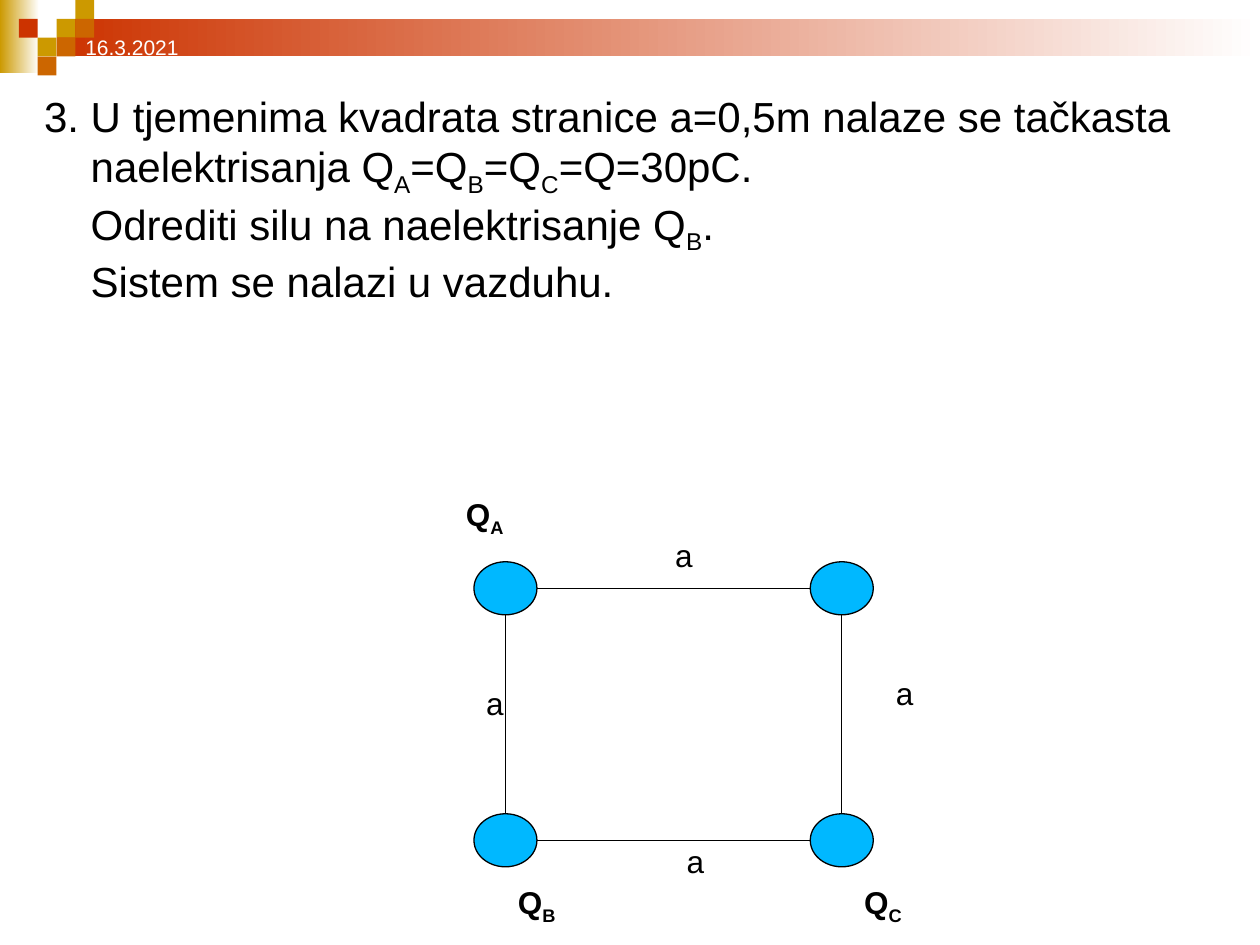
from pptx import Presentation
from pptx.dml.color import RGBColor
from pptx.enum.shapes import MSO_CONNECTOR, MSO_SHAPE
from pptx.enum.text import MSO_ANCHOR
from pptx.oxml.ns import qn
from pptx.util import Cm, Pt
from lxml.etree import SubElement

THEME = {
    "font": "Arial",
    "gold": "CC9900", "orange": "CC6600", "red": "CC3300",
    "white": "FFFFFF", "black": "000000", "charge": "00B8FF",
    "date": 12, "body": 24, "label": 18, "line": 0.75,
}

# Subscripts are written as a second item: (text, is_subscript)
DATE = [[("16.3.2021", False)]]
PROBLEM = [
    [("3. U tjemenima kvadrata stranice a=0,5m nalaze se tačkasta", False)],
    [("naelektrisanja Q", False), ("A", True), ("=Q", False), ("B", True),
     ("=Q", False), ("C", True), ("=Q=30pC.", False)],
    [("Odrediti silu na naelektrisanje Q", False), ("B", True), (".", False)],
    [("Sistem se nalazi u vazduhu.", False)],
]
SIDE_LABELS = [(13.36, 10.69), (17.81, 13.46), (13.59, 16.84), (9.55, 13.67)]
CHARGE_LABELS = [("A", 9.14, 9.86), ("B", 10.19, 17.68), ("C", 17.17, 17.68)]

BANDS = [("gold", 0, 0, 0.79, 1.47), ("red", 1.14, 0.38, 24.26, 0.76)]
TILE = 0.38
TILES = [("gold", 3, 1), ("gold", 4, 0), ("orange", 4, 1), ("gold", 2, 2),
         ("red", 1, 1), ("orange", 3, 2), ("orange", 2, 3)]  # colour, column, row

LEFT, RIGHT, TOP, BOTTOM = 10.19, 16.97, 11.86, 16.94
CHARGE_W, CHARGE_H = 1.27, 1.07


def color(name):
    return RGBColor.from_string(THEME[name])


def add_text(s, paragraphs, x, y, w, h, size="label", ink="black", bold=False,
             wrap=False, anchor=MSO_ANCHOR.TOP, indent=0):
    """Add a text box; indent (cm) applies to every paragraph after the first."""
    tf = s.shapes.add_textbox(Cm(x), Cm(y), Cm(w), Cm(h)).text_frame
    tf.word_wrap = wrap
    tf.vertical_anchor = anchor
    for i, runs in enumerate(paragraphs):
        p = tf.paragraphs[0] if i == 0 else tf.add_paragraph()
        if i and indent:
            p._p.get_or_add_pPr().set("marL", str(Cm(indent)))
        for text, subscript in runs:
            r = p.add_run()
            r.text = text
            r.font.name = THEME["font"]
            r.font.size = Pt(THEME[size])
            r.font.bold = bold
            r.font.color.rgb = color(ink)
            if subscript:
                r.font._element.set("baseline", "-25000")


def add_filled(s, kind, fill, x, y, w, h, fade=False, outline=False):
    """Add a shape; fade makes the fill run to white from left to right."""
    sp = s.shapes.add_shape(kind, Cm(x), Cm(y), Cm(w), Cm(h))
    sp.shadow.inherit = False
    if fade:
        sp.fill.gradient()
        sp.fill.gradient_angle = 0
        for stop, position, name in zip(sp.fill.gradient_stops, (0, 1), (fill, "white")):
            stop.position = position
            stop.color.rgb = color(name)
    else:
        sp.fill.solid()
        sp.fill.fore_color.rgb = color(fill)
    if outline:
        sp.line.color.rgb = color("black")
        sp.line.width = Pt(THEME["line"])
    else:
        sp.line.fill.background()


def add_side(s, x1, y1, x2, y2):
    line = s.shapes.add_connector(MSO_CONNECTOR.STRAIGHT, Cm(x1), Cm(y1), Cm(x2), Cm(y2))
    line.line.color.rgb = color("black")
    line.line.width = Pt(THEME["line"])
    SubElement(line._element.spPr, qn("a:effectLst"))


def add_header(s):
    for fill, *box in BANDS:
        add_filled(s, MSO_SHAPE.RECTANGLE, fill, *box, fade=True)
    for fill, col, row in TILES:
        add_filled(s, MSO_SHAPE.RECTANGLE, fill, col * TILE, row * TILE, TILE, TILE)
    add_text(s, DATE, 1.47, 0.43, 5.92, 0.89, size="date", ink="white",
             wrap=True, anchor=MSO_ANCHOR.BOTTOM)


def add_square(s):
    rx, ry = CHARGE_W / 2, CHARGE_H / 2
    for y in (TOP, BOTTOM):
        for x in (LEFT, RIGHT):
            add_filled(s, MSO_SHAPE.OVAL, "charge", x - rx, y - ry,
                       CHARGE_W, CHARGE_H, outline=True)
    for y in (TOP, BOTTOM):
        add_side(s, LEFT + rx, y, RIGHT - rx, y)
    for x in (LEFT, RIGHT):
        add_side(s, x, TOP + ry, x, BOTTOM - ry)
    for x, y in SIDE_LABELS:
        add_text(s, [[("a", False)]], x, y, 0.89, 1.3)
    for name, x, y in CHARGE_LABELS:
        add_text(s, [[("Q", False), (name, True)]], x, y, 1.32, 1.02, bold=True)


def main():
    prs = Presentation()
    prs.slide_width, prs.slide_height = Cm(25.4), Cm(19.05)
    s = prs.slides.add_slide(prs.slide_layouts[6])
    add_header(s)
    add_text(s, PROBLEM, 0.64, 1.7, 23.67, 8.46, size="body", wrap=True, indent=0.94)
    add_square(s)
    prs.save("out.pptx")


if __name__ == "__main__":
    main()
